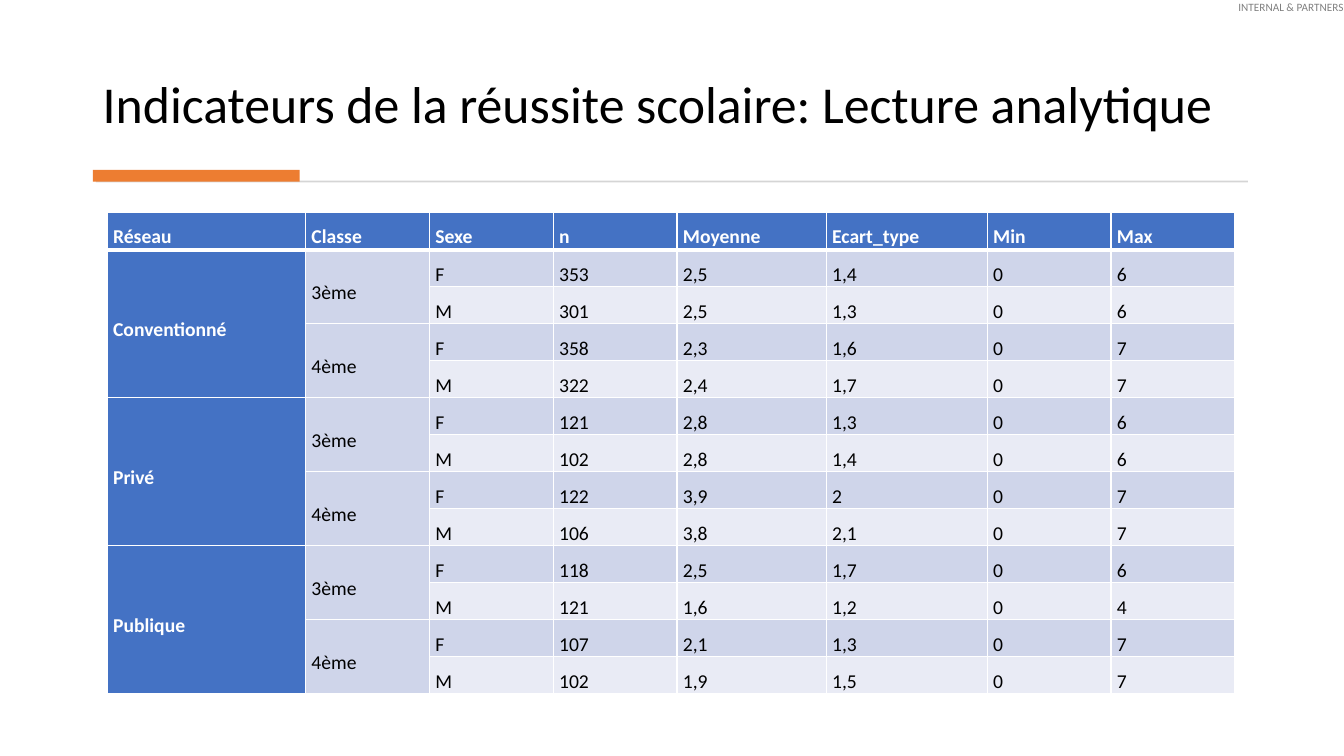
from dataclasses import dataclass

from lxml import etree
from pptx import Presentation
from pptx.dml.color import RGBColor
from pptx.enum.shapes import MSO_SHAPE
from pptx.enum.text import MSO_ANCHOR, PP_ALIGN
from pptx.oxml.ns import qn
from pptx.util import Cm, Pt

RECTANGLE = MSO_SHAPE.RECTANGLE
TOP, MIDDLE, BOTTOM = MSO_ANCHOR.TOP, MSO_ANCHOR.MIDDLE, MSO_ANCHOR.BOTTOM
JUSTIFY = PP_ALIGN.JUSTIFY


@dataclass(frozen=True)
class Theme:
    font: str = "Calibri"
    title_size: int = 37
    table_size: int = 14
    label_size: int = 8
    black: str = "000000"
    white: str = "FFFFFF"
    label: str = "808080"
    rule: str = "D5D5D5"
    accent: str = "ED7D31"
    header: str = "4472C4"
    band_dark: str = "CFD5EA"
    band_light: str = "E9EBF5"


THEME = Theme()
HEADINGS = ["Réseau", "Classe", "Sexe", "n", "Moyenne", "Ecart_type", "Min", "Max"]
COLUMN_WIDTHS = [5, 3.12, 3.12, 3.12, 3.76, 4.06, 3.12, 3.12]
NETWORKS = ["Conventionné", "Privé", "Publique"]
CLASSES = ["3ème", "4ème"]
SEXES = ["F", "M"]
RESULTS = [
    ["353", "2,5", "1,4", "0", "6"],
    ["301", "2,5", "1,3", "0", "6"],
    ["358", "2,3", "1,6", "0", "7"],
    ["322", "2,4", "1,7", "0", "7"],
    ["121", "2,8", "1,3", "0", "6"],
    ["102", "2,8", "1,4", "0", "6"],
    ["122", "3,9", "2", "0", "7"],
    ["106", "3,8", "2,1", "0", "7"],
    ["118", "2,5", "1,7", "0", "6"],
    ["121", "1,6", "1,2", "0", "4"],
    ["107", "2,1", "1,3", "0", "7"],
    ["102", "1,9", "1,5", "0", "7"],
]
CLASS_SPAN = len(SEXES)
NETWORK_SPAN = len(CLASSES) * CLASS_SPAN


def style_text(paragraph, size, color, bold=False):
    for run in paragraph.runs:
        run.font.name = THEME.font
        run.font.size = Pt(size)
        run.font.bold = bold
        run.font.color.rgb = RGBColor.from_string(color)


def add_text(slide, box, text, size, color, inset_x=0, inset_y=0, anchor=TOP, wrap=True):
    frame = slide.shapes.add_textbox(*map(Cm, box)).text_frame
    frame.word_wrap = wrap
    frame.vertical_anchor = anchor
    frame.margin_left = frame.margin_right = Cm(inset_x)
    frame.margin_top = frame.margin_bottom = Cm(inset_y)
    frame.text = text
    style_text(frame.paragraphs[0], size, color)
    return frame.paragraphs[0]


def add_bar(slide, box, color):
    bar = slide.shapes.add_shape(RECTANGLE, *map(Cm, box))
    bar.shadow.inherit = False
    bar.fill.solid()
    bar.fill.fore_color.rgb = RGBColor.from_string(color)
    bar.line.fill.background()


def add_heading(slide, box):
    left, top, width, height = box
    title = add_text(slide, (left, top, width, 2.82),
                     "Indicateurs de la réussite scolaire: Lecture analytique",
                     THEME.title_size, THEME.black, 0.25, 0.13, BOTTOM)
    title.line_spacing = 0.9
    add_bar(slide, (left + 0.08, top + height - 0.03, width - 0.15, 0.05), THEME.rule)
    add_bar(slide, (left, top + height - 0.3, 5.21, 0.3), THEME.accent)


def set_borders(cell, **widths):
    properties = cell._tc.get_or_add_tcPr()
    for position, side in enumerate("LRTB"):
        line = etree.Element(qn(f"a:ln{side}"), w=str(Pt(widths.get(side, 1))))
        fill = etree.SubElement(line, qn("a:solidFill"))
        etree.SubElement(fill, qn("a:srgbClr"), val=THEME.white)
        properties.insert(position, line)


def fill_cell(cell, text, background, color, anchor, bold):
    cell.fill.solid()
    cell.fill.fore_color.rgb = RGBColor.from_string(background)
    cell.vertical_anchor = anchor
    cell.margin_left = cell.margin_right = Cm(0.15)
    cell.margin_top = cell.margin_bottom = 0
    if text:
        cell.text_frame.text = text
        paragraph = cell.text_frame.paragraphs[0]
        paragraph.alignment = JUSTIFY
        paragraph.line_spacing = 1.5
        paragraph.space_after = Pt(8)
        style_text(paragraph, THEME.table_size, color, bold)


def add_results_table(slide, box):
    row_count = len(RESULTS) + 1
    table = slide.shapes.add_table(row_count, len(HEADINGS), *map(Cm, box)).table
    for column, width in zip(table.columns, COLUMN_WIDTHS):
        column.width = Cm(width)
    for row in table.rows:
        row.height = Cm(box[3] / row_count)

    for column, heading in enumerate(HEADINGS):
        cell = table.cell(0, column)
        fill_cell(cell, heading, THEME.header, THEME.white, TOP, True)
        set_borders(cell, B=3)

    for index, result in enumerate(RESULTS):
        network = NETWORKS[index // NETWORK_SPAN] if index % NETWORK_SPAN == 0 else ""
        grade = CLASSES[index // CLASS_SPAN % len(CLASSES)] if index % CLASS_SPAN == 0 else ""
        sex = SEXES[index % len(SEXES)]
        band = THEME.band_light if index % 2 else THEME.band_dark
        for column, text in enumerate([network, grade, sex, *result]):
            cell = table.cell(index + 1, column)
            background = (THEME.header, THEME.band_dark)[column] if column < 2 else band
            color = THEME.black if column else THEME.white
            anchor = MIDDLE if column < 2 else BOTTOM
            fill_cell(cell, text, background, color, anchor, column == 0)
            set_borders(cell, T=1 if index else 3)

    for column, span in enumerate([NETWORK_SPAN, CLASS_SPAN]):
        for first in range(1, row_count, span):
            table.cell(first, column).merge(table.cell(first + span - 1, column))


def main():
    presentation = Presentation()
    presentation.slide_width, presentation.slide_height = Cm(33.87), Cm(19.05)
    slide = presentation.slides.add_slide(presentation.slide_layouts[6])
    add_text(slide, (31.21, 0, 2.71, 0.34), "INTERNAL & PARTNERS",
             THEME.label_size, THEME.label, wrap=False)
    add_heading(slide, (2.34, 0.71, 29.18, 3.87))
    add_results_table(slide, (2.7, 5.36, sum(COLUMN_WIDTHS), 12.12))
    presentation.save("out.pptx")


if __name__ == "__main__":
    main()
